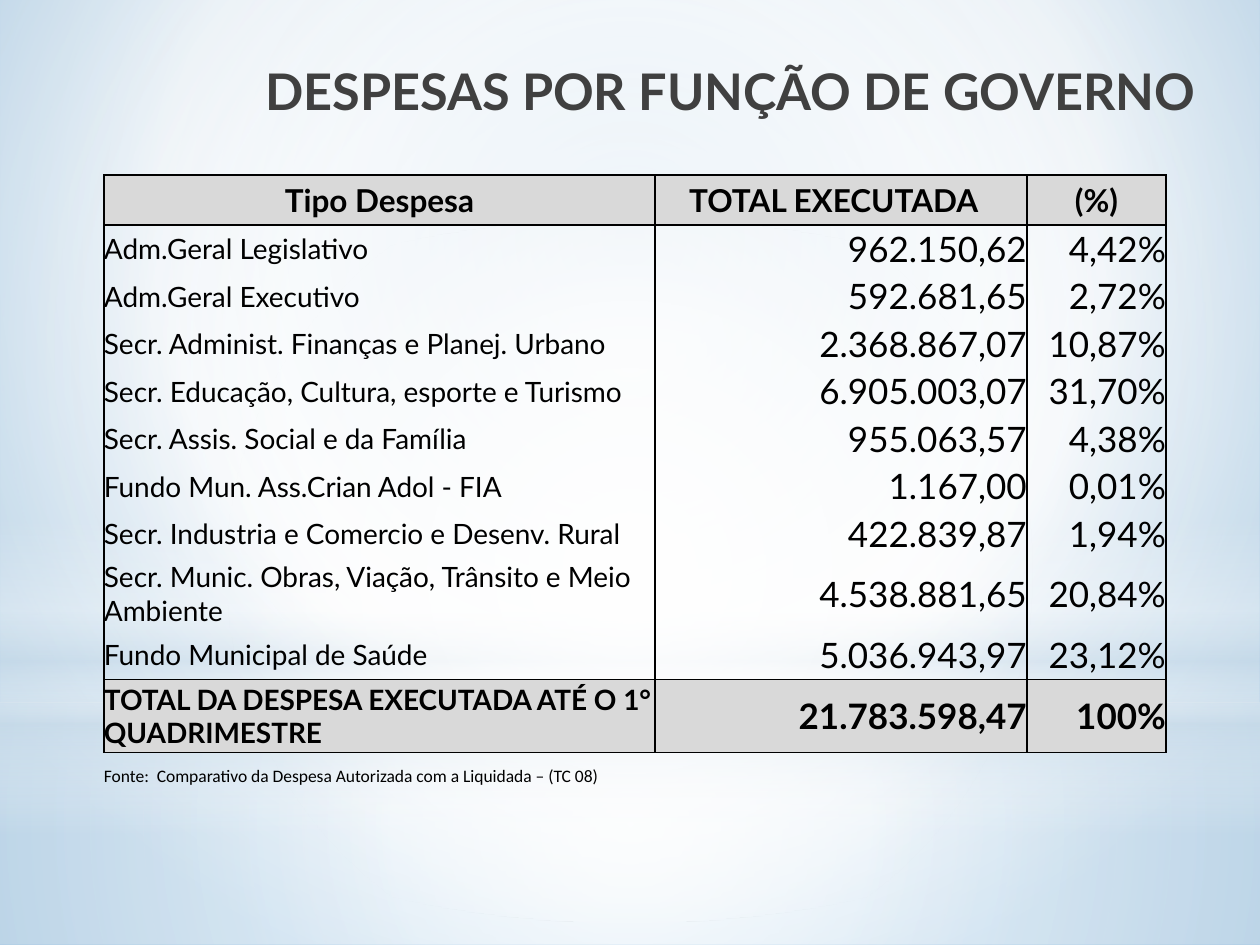
"""Build the slide on expenditure by government function."""
from lxml import etree
from pptx import Presentation
from pptx.dml.color import RGBColor
from pptx.enum.shapes import MSO_SHAPE
from pptx.enum.text import MSO_ANCHOR, PP_ALIGN
from pptx.oxml import parse_xml
from pptx.oxml.ns import nsdecls, qn
from pptx.util import Pt

PX = 914400 // 126
BLACK = RGBColor(0, 0, 0)
DARK = RGBColor(0x40, 0x40, 0x40)
GREY = RGBColor(0xD9, 0xD9, 0xD9)
WHITE = RGBColor(0xFF, 0xFF, 0xFF)
PALE = RGBColor(0xCC, 0xDD, 0xEA)
SKY = RGBColor(0xBC, 0xD5, 0xE8)
BLUE = RGBColor(0x82, 0xB6, 0xDE)
CENTRE = (50, 50, 50, 50)


def set_gradient(fill, parent, stops, focus):
    fill.gradient()
    stop_xml = "".join(
        f'<a:gs pos="{pos * 1000}"><a:srgbClr val="{color}">'
        f'<a:alpha val="{alpha * 1000}"/></a:srgbClr></a:gs>'
        for pos, color, alpha in stops)
    if focus:
        sides = " ".join(f'{k}="{v * 1000}"' for k, v in zip("ltrb", focus))
        shade = f'<a:path path="circle"><a:fillToRect {sides}/></a:path>'
    else:
        shade = '<a:lin ang="5400000" scaled="0"/>'
    old = parent.find(".//" + qn("a:gradFill"))
    old.getparent().replace(old, parse_xml(
        f'<a:gradFill {nsdecls("a")} rotWithShape="1"><a:gsLst>{stop_xml}</a:gsLst>{shade}</a:gradFill>'))


def set_borders(cell, sides):
    tcPr = cell._tc.get_or_add_tcPr()
    for i, side in enumerate("LRTB"):
        ln = etree.Element(qn(f"a:ln{side}"), w=str(Pt(1)))
        if side in sides:
            fill = etree.SubElement(ln, qn("a:solidFill"))
            etree.SubElement(fill, qn("a:srgbClr"), val=str(BLACK))
        else:
            etree.SubElement(ln, qn("a:noFill"))
        tcPr.insert(i, ln)


prs = Presentation()
prs.slide_width, prs.slide_height = 1260 * PX, 945 * PX
s = prs.slides.add_slide(prs.slide_layouts[5])
set_gradient(s.background.fill, s.element,
             [(0, SKY, 100), (60, WHITE, 100), (100, BLUE, 100)], (20, 10, 20, 60))

glows = [
    (MSO_SHAPE.RECTANGLE, 703, 242, [(0, WHITE, 91), (37, WHITE, 76), (100, PALE, 79)], CENTRE),
    (MSO_SHAPE.RECTANGLE, 0, 703, [(0, WHITE, 89), (48, WHITE, 62), (100, PALE, 79)], CENTRE),
    (MSO_SHAPE.RECTANGLE, 519, 315, [(0, WHITE, 0), (29, WHITE, 30), (45, PALE, 40),
                                     (55, WHITE, 26), (65, PALE, 60), (100, WHITE, 0)], None),
    (MSO_SHAPE.OVAL, 220, 703, [(0, WHITE, 100), (56, WHITE, 0)], CENTRE),
]
for kind, top, height, stops, focus in glows:
    sp = s.shapes.add_shape(kind, 0, top * PX, 1260 * PX, height * PX)
    sp.shadow.inherit = False
    sp.line.fill.background()
    set_gradient(sp.fill, sp._element, stops, focus)

title = s.shapes.title
s.shapes._spTree.append(title._element)
title.left, title.top, title.width, title.height = (v * PX for v in (74, 55, 1134, 70))
tf = title.text_frame
tf.text = "DESPESAS POR FUNÇÃO DE GOVERNO"
tf.vertical_anchor = MSO_ANCHOR.MIDDLE
p = tf.paragraphs[0]
p.alignment = PP_ALIGN.RIGHT
for name, value in {"name": "Lato", "size": Pt(28.8), "bold": True}.items():
    setattr(p.font, name, value)
p.font.color.rgb = DARK

rows = [
    ("Tipo Despesa", "TOTAL EXECUTADA  ", "(%)"),
    ("Adm.Geral Legislativo", "962.150,62", "4,42%"),
    ("Adm.Geral Executivo", "592.681,65", "2,72%"),
    ("Secr. Administ. Finanças e Planej. Urbano", "2.368.867,07", "10,87%"),
    ("Secr. Educação, Cultura, esporte e Turismo", "6.905.003,07", "31,70%"),
    ("Secr. Assis. Social e da Família", "955.063,57", "4,38%"),
    ("Fundo Mun. Ass.Crian Adol - FIA", "1.167,00", "0,01%"),
    ("Secr. Industria e Comercio e Desenv. Rural", "422.839,87", "1,94%"),
    ("Secr. Munic. Obras, Viação, Trânsito e Meio Ambiente", "4.538.881,65", "20,84%"),
    ("Fundo Municipal de Saúde", "5.036.943,97", "23,12%"),
    ("TOTAL DA DESPESA EXECUTADA ATÉ O 1° QUADRIMESTRE", "21.783.598,47", "100%"),
    ("Fonte:  Comparativo da Despesa Autorizada com a Liquidada – (TC 08)", "", ""),
]
widths = [551, 372, 139]
heights = [50] + [48, 47] * 3 + [48, 72, 50, 73, 48]
HEADER, TOTAL, SOURCE = 0, 10, 11

table = s.shapes.add_table(len(rows), len(widths), 104 * PX, 175 * PX,
                           sum(widths) * PX, sum(heights) * PX).table
table.first_row = table.horz_banding = False
for column, width in zip(table.columns, widths):
    column.width = width * PX
for row, height in zip(table.rows, heights):
    row.height = height * PX
table.cell(SOURCE, 0).merge(table.cell(SOURCE, 1))

for i, texts in enumerate(rows):
    strong = i in (HEADER, TOTAL)
    sides = "LRTB" if strong else "T" if i == SOURCE else "LR"
    if i == HEADER + 1:
        sides += "T"
    if i == TOTAL - 1:
        sides += "B"
    for j, text in enumerate(texts):
        cell = table.cell(i, j)
        if strong:
            cell.fill.solid()
            cell.fill.fore_color.rgb = GREY
        else:
            cell.fill.background()
        set_borders(cell, sides)
        for name in ("margin_left", "margin_top", "margin_right", "margin_bottom"):
            setattr(cell, name, 0)
        cell.vertical_anchor = MSO_ANCHOR.MIDDLE
        p = cell.text_frame.paragraphs[0]
        p.alignment = (PP_ALIGN.CENTER if i == HEADER
                       else PP_ALIGN.RIGHT if j else PP_ALIGN.LEFT)
        size = 18 if i == HEADER else 10 if i == SOURCE else 20 if j else 16
        font = {"name": "Calibri" if i == SOURCE else "Lato", "size": Pt(size), "bold": strong}
        if text:
            r = p.add_run()
            r.text = text
            for name, value in font.items():
                setattr(r.font, name, value)
            r.font.color.rgb = BLACK

prs.save("out.pptx")
